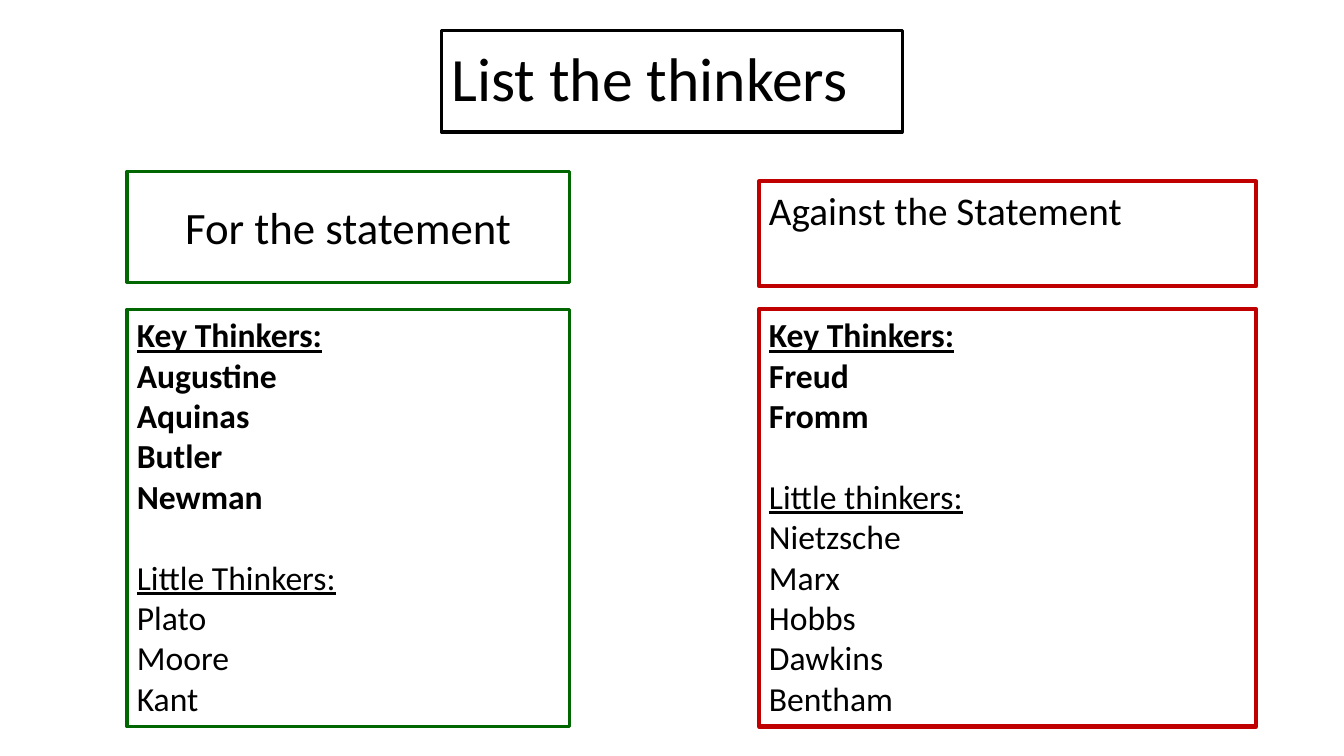
from dataclasses import dataclass

from pptx import Presentation
from pptx.dml.color import RGBColor
from pptx.enum import shapes, text
from pptx.util import Pt

BLACK = RGBColor(0x00, 0x00, 0x00)
GREEN = RGBColor(0x00, 0x66, 0x00)
RED = RGBColor(0xC0, 0x00, 0x00)

FONT = "Calibri"
LIST_SIZE = 24
LIST_TOP, LIST_HEIGHT = 221, 298
GROUP_GAP = 29


@dataclass(frozen=True)
class Box:
    left: float
    top: float
    width: float
    height: float
    color: RGBColor
    weight: float


@dataclass(frozen=True)
class ThinkerGroup:
    heading: str
    names: tuple[str, ...]
    bold: bool


@dataclass(frozen=True)
class Side:
    heading: str
    heading_box: Box
    heading_format: dict
    list_weight: float
    groups: tuple[ThinkerGroup, ...]


SIDES = (
    Side(
        "For the statement",
        Box(90.7, 122.4, 316, 79.2, GREEN, 2.25),
        {"size": 32, "align": text.PP_ALIGN.CENTER},
        2.5,
        (
            ThinkerGroup("Key Thinkers:", ("Augustine", "Aquinas", "Butler", "Newman"), True),
            ThinkerGroup("Little Thinkers:", ("Plato", "Moore", "Kant"), False),
        ),
    ),
    Side(
        "Against the Statement",
        Box(542.2, 129.6, 355, 75, RED, 2.75),
        {"size": 28},
        3,
        (
            ThinkerGroup("Key Thinkers:", ("Freud", "Fromm"), True),
            ThinkerGroup(
                "Little thinkers:",
                ("Nietzsche", "Marx", "Hobbs", "Dawkins", "Bentham"),
                False,
            ),
        ),
    ),
)


def add_box(slide, box: Box, anchor=text.MSO_ANCHOR.TOP):
    """Draw an outlined, unfilled box and return its text frame."""
    outline = slide.shapes.add_shape(
        shapes.MSO_SHAPE.RECTANGLE,
        Pt(box.left), Pt(box.top), Pt(box.width), Pt(box.height),
    )
    outline.shadow.inherit = False
    outline.fill.background()
    outline.line.color.rgb = box.color
    outline.line.width = Pt(box.weight)
    frame = outline.text_frame
    frame.word_wrap = True
    frame.vertical_anchor = anchor
    return frame


def write(frame, wording: str, *, size: float, bold: bool = False,
          underline: bool = False, align=text.PP_ALIGN.LEFT,
          space_before: float = 0, line_spacing: float = 1.0) -> None:
    """Write one paragraph, using the first one while it is still empty."""
    first = frame.paragraphs[0]
    paragraph = frame.add_paragraph() if first.runs else first
    paragraph.alignment = align
    paragraph.space_before = Pt(space_before)
    paragraph.line_spacing = line_spacing
    run = paragraph.add_run()
    run.text = wording
    run.font.name = FONT
    run.font.size = Pt(size)
    run.font.bold = bold
    run.font.underline = underline
    run.font.color.rgb = BLACK


def add_side(slide, side: Side) -> None:
    heading_box = side.heading_box
    centred = "align" in side.heading_format
    anchor = text.MSO_ANCHOR.MIDDLE if centred else text.MSO_ANCHOR.TOP
    write(add_box(slide, heading_box, anchor), side.heading, **side.heading_format)

    thinkers = add_box(slide, Box(
        heading_box.left, LIST_TOP, heading_box.width, LIST_HEIGHT,
        heading_box.color, side.list_weight,
    ))
    for index, group in enumerate(side.groups):
        write(thinkers, group.heading, size=LIST_SIZE, bold=group.bold,
              underline=True, space_before=GROUP_GAP if index else 0)
        for name in group.names:
            write(thinkers, name, size=LIST_SIZE, bold=group.bold)


def main() -> None:
    deck = Presentation()
    deck.slide_width, deck.slide_height = Pt(960), Pt(540)
    slide = deck.slides.add_slide(deck.slide_layouts[6])

    title = add_box(slide, Box(315.4, 21.6, 329, 72.7, BLACK, 2.25),
                    text.MSO_ANCHOR.MIDDLE)
    write(title, "List the thinkers", size=44, line_spacing=0.9)
    for side in SIDES:
        add_side(slide, side)

    deck.save("out.pptx")


if __name__ == "__main__":
    main()
